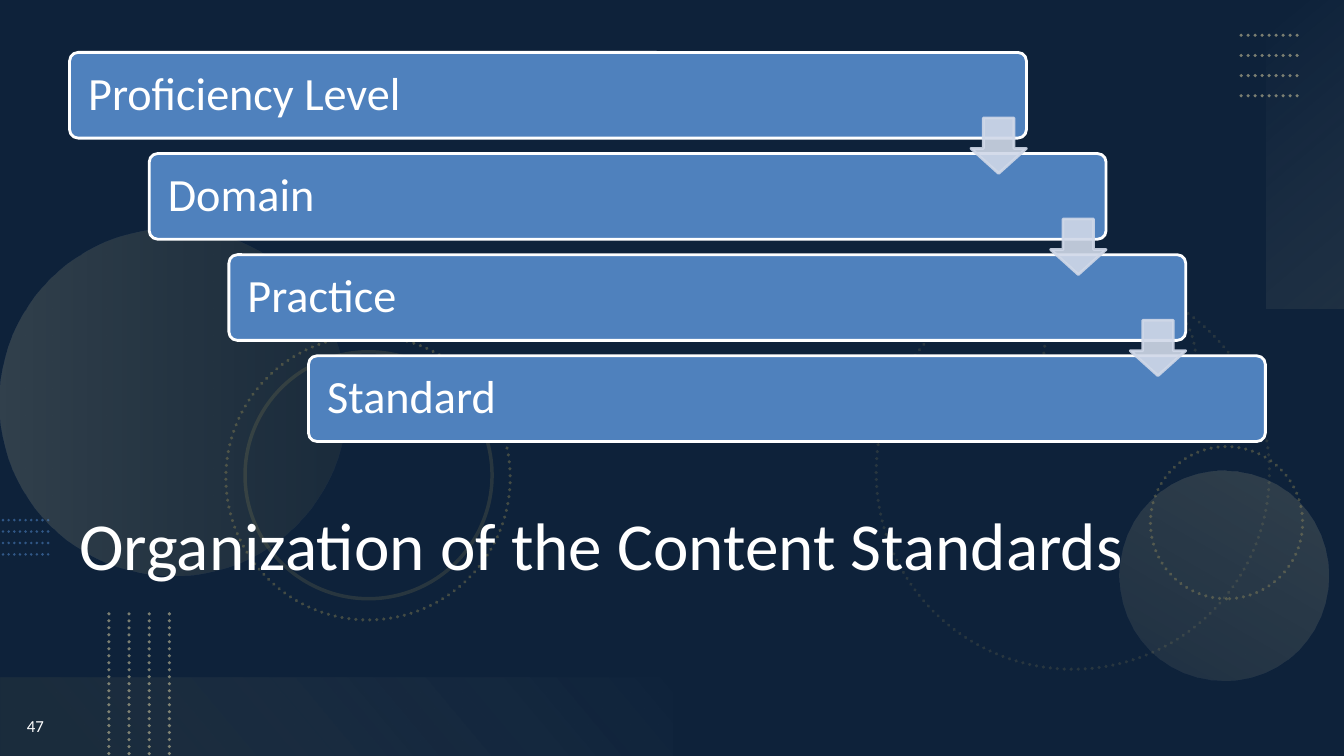
from dataclasses import dataclass
from typing import Optional

from lxml.etree import SubElement
from pptx import Presentation
from pptx.dml.color import RGBColor
from pptx.enum.dml import MSO_LINE
from pptx.enum.shapes import MSO_CONNECTOR, MSO_SHAPE
from pptx.enum.text import MSO_ANCHOR, PP_ALIGN
from pptx.oxml import parse_xml
from pptx.oxml.ns import nsdecls, qn
from pptx.util import Inches, Pt


@dataclass(frozen=True)
class Theme:
    font: str = "Calibri"
    navy: str = "1F497D"
    black: str = "000000"
    white: str = "FFFFFF"
    step: str = "4F81BD"
    arrow: str = "D0D8E8"
    olive: str = "948A54"
    sand: str = "C4BD97"
    cream: str = "F8F7F3"
    sky: str = "558ED5"
    title_size: int = 48
    step_size: int = 33
    number_size: int = 12
    outline: float = 2
    ring: float = 2.5


@dataclass(frozen=True)
class Stop:
    pos: int
    color: str
    alpha: int


@dataclass(frozen=True)
class Decor:
    box: tuple
    rot: int = 0
    kind: MSO_SHAPE = MSO_SHAPE.OVAL
    stops: tuple = ()
    angle: int = 90
    ring_alpha: Optional[int] = None
    dotted: bool = True


@dataclass(frozen=True)
class DotLines:
    start: tuple
    end: tuple
    step: tuple
    color: str
    width: float
    alpha: int


T = Theme()
STEPS = ("Proficiency Level", "Domain", "Practice", "Standard")
STEP_W, STEP_H, ARROW = 9.49, 0.85, 0.55
STEP_X, STEP_Y = 0.69, 0.52
SHIFT_X, SHIFT_Y = 0.79, 3.01 / 3

BACKDROP = (
    Decor((8.69, 2.74, 3.9, 3.9), 75, ring_alpha=20),
    Decor((11.41, 4.43, 1.51, 1.51), 270, ring_alpha=40),
    Decor((0, 2.27, 3.44, 3.44), 270, stops=(Stop(0, T.sand, 20), Stop(100, T.olive, 10))),
    Decor((11.1, 4.67, 2.08, 2.08), 210, stops=(Stop(0, T.sand, 10), Stop(100, T.sand, 20))),
    Decor((2.24, 3.33, 2.82, 2.82), 75, ring_alpha=40),
    Decor((2.43, 3.49, 2.45, 2.45), 75, ring_alpha=20, dotted=False),
    Decor((11.42, 1.14, 3.06, 0.78), 270, MSO_SHAPE.RECTANGLE,
          (Stop(0, T.cream, 0), Stop(100, T.sand, 10)), 140),
    Decor((10.35, 2.81, 1.51, 1.51), 270, ring_alpha=20),
    Decor((0, 6.72, 6.67, 0.78), 180, MSO_SHAPE.RECTANGLE,
          (Stop(10, T.olive, 10), Stop(100, T.cream, 0)), 140),
)
DOT_LINES = (
    DotLines((12.31, 0.35), (12.91, 0.35), (0, 0.2), T.sand, T.ring, 60),
    DotLines((0.03, 5.16), (0.5, 5.16), (0, 0.34 / 3), T.sky, T.outline, 50),
    DotLines((1.08, 6.09), (1.08, 7.5), (0.2, 0), T.sand, T.ring, 60),
)


def set_alpha(fill_parent, alpha: int) -> None:
    for color in fill_parent.iterchildren(qn("a:solidFill")):
        SubElement(color[0], qn("a:alpha"), val=str(alpha * 1000))


def set_line(line, color: str, width: float, alpha: int = 100, dotted: bool = False) -> None:
    line.color.rgb = RGBColor.from_string(color)
    line.width = Pt(width)
    ln = line._get_or_add_ln()
    if alpha < 100:
        set_alpha(ln, alpha)
    if dotted:
        line.dash_style = MSO_LINE.ROUND_DOT
        ln.set("cap", "rnd")


def add_shape(s, kind: MSO_SHAPE, box: tuple, color: Optional[str] = None, alpha: int = 100):
    sp = s.shapes.add_shape(kind, *map(Inches, box))
    sp.shadow.inherit = False
    sp.line.fill.background()
    if color is None:
        sp.fill.background()
    else:
        sp.fill.solid()
        sp.fill.fore_color.rgb = RGBColor.from_string(color)
        if alpha < 100:
            set_alpha(sp._element.spPr, alpha)
    return sp


def add_decor(s, d: Decor) -> None:
    sp = add_shape(s, d.kind, d.box)
    sp.rotation = d.rot
    if d.stops:
        stops = "".join(
            f'<a:gs pos="{g.pos * 1000}"><a:srgbClr val="{g.color}">'
            f'<a:alpha val="{g.alpha * 1000}"/></a:srgbClr></a:gs>' for g in d.stops)
        grad = parse_xml(
            f'<a:gradFill {nsdecls("a")} rotWithShape="1"><a:gsLst>{stops}</a:gsLst>'
            f'<a:lin ang="{d.angle * 60000}" scaled="0"/></a:gradFill>')
        spPr = sp._element.spPr
        spPr.replace(spPr.find(qn("a:noFill")), grad)
    if d.ring_alpha is not None:
        set_line(sp.line, T.olive, T.ring, d.ring_alpha, d.dotted)


def add_dot_lines(s, g: DotLines) -> None:
    for i in range(4):
        dx, dy = g.step[0] * i, g.step[1] * i
        ends = (g.start[0] + dx, g.start[1] + dy, g.end[0] + dx, g.end[1] + dy)
        line = s.shapes.add_connector(MSO_CONNECTOR.STRAIGHT, *map(Inches, ends))
        set_line(line.line, g.color, g.width, g.alpha, True)
        SubElement(line._element.spPr, qn("a:effectLst"))


def write(sp, text: str, size: int, frame: dict, para: dict) -> None:
    tf = sp.text_frame
    for name, value in {"word_wrap": True, **frame}.items():
        setattr(tf, name, value)
    p = tf.paragraphs[0]
    for name, value in para.items():
        setattr(p, name, value)
    r = p.add_run()
    r.text = text
    for name, value in {"name": T.font, "size": Pt(size)}.items():
        setattr(r.font, name, value)
    r.font.color.rgb = RGBColor.from_string(T.white)


def add_text(s, box: tuple, text: str, size: int, anchor: MSO_ANCHOR, align: PP_ALIGN) -> None:
    sp = s.shapes.add_textbox(*map(Inches, box))
    write(sp, text, size, {"vertical_anchor": anchor}, {"alignment": align})


def add_step(s, i: int, text: str) -> None:
    box = (STEP_X + SHIFT_X * i, STEP_Y + SHIFT_Y * i, STEP_W, STEP_H)
    sp = add_shape(s, MSO_SHAPE.ROUNDED_RECTANGLE, box, T.step)
    sp.adjustments[0] = 0.1
    set_line(sp.line, T.white, T.outline)
    write(sp, text, T.step_size,
          {"vertical_anchor": MSO_ANCHOR.MIDDLE, "margin_left": Inches(0.16)},
          {"alignment": PP_ALIGN.LEFT, "line_spacing": 0.9})


def add_arrow(s, i: int) -> None:
    box = (STEP_X + STEP_W - ARROW + SHIFT_X * i, 1.17 + SHIFT_Y * i, ARROW, ARROW)
    sp = add_shape(s, MSO_SHAPE.DOWN_ARROW, box, T.arrow, 90)
    sp.adjustments[0], sp.adjustments[1] = 0.45, 0.55
    sp.adjustments[0], sp.adjustments[1] = 0.55, 0.45
    set_line(sp.line, T.arrow, T.outline, 90)


def main() -> None:
    prs = Presentation()
    prs.slide_width, prs.slide_height = Inches(13.33), Inches(7.5)
    s = prs.slides.add_slide(prs.slide_layouts[6])
    s.background.fill.solid()
    s.background.fill.fore_color.rgb = RGBColor.from_string(T.navy)
    add_shape(s, MSO_SHAPE.RECTANGLE, (0, 0, 13.33, 7.5), T.black, 53)
    for d in BACKDROP:
        add_decor(s, d)
    for g in DOT_LINES:
        add_dot_lines(s, g)
    add_text(s, (0.69, 4.94, 11.73, 1.73), "Organization of the Content Standards",
             T.title_size, MSO_ANCHOR.TOP, PP_ALIGN.LEFT)
    add_text(s, (0, 6.9, 0.7, 0.6), "47", T.number_size, MSO_ANCHOR.MIDDLE, PP_ALIGN.CENTER)
    for i, text in enumerate(STEPS):
        add_step(s, i, text)
    for i in range(len(STEPS) - 1):
        add_arrow(s, i)
    prs.save("out.pptx")


if __name__ == "__main__":
    main()
